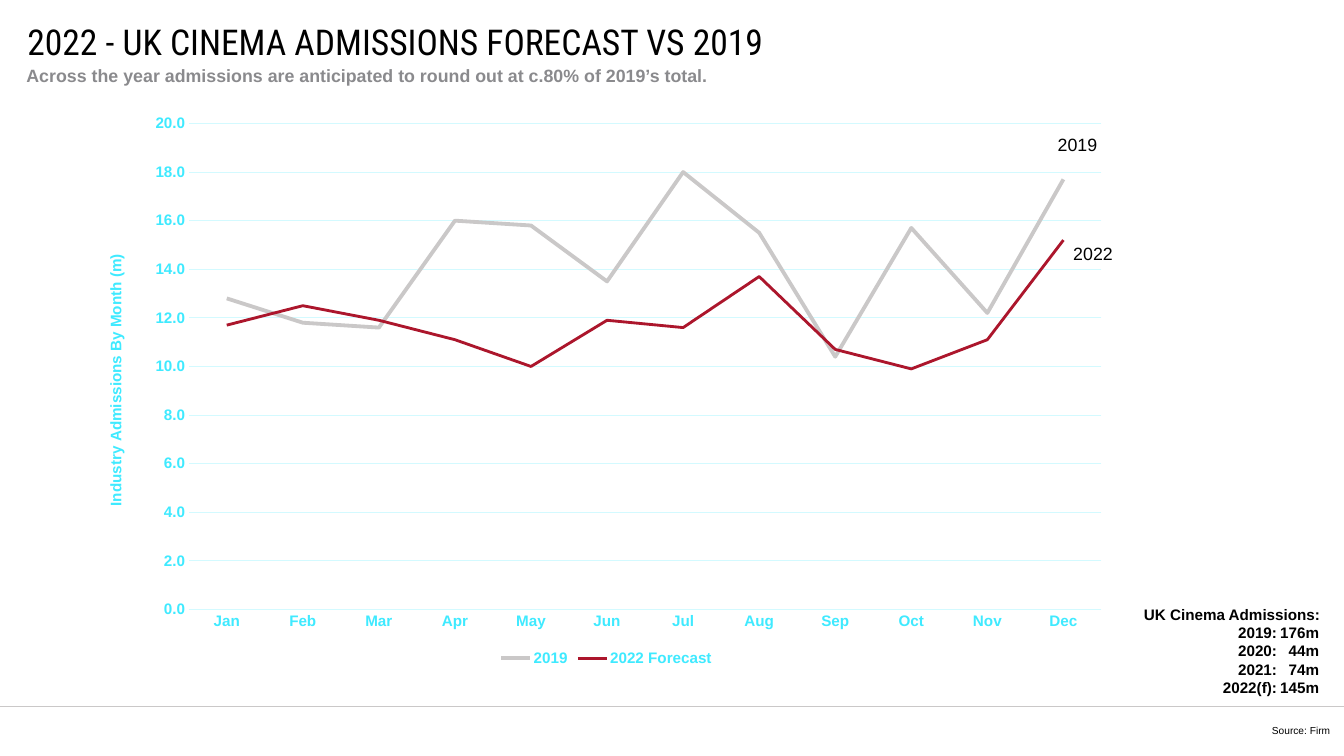
from lxml.etree import SubElement
from pptx import Presentation
from pptx.chart.data import CategoryChartData
from pptx.dml.color import RGBColor
from pptx.enum.chart import XL_CHART_TYPE as ChartType, XL_LEGEND_POSITION as LegendPosition
from pptx.enum.chart import XL_MARKER_STYLE as Marker, XL_TICK_MARK as TickMark
from pptx.enum.shapes import MSO_CONNECTOR as Connector
from pptx.enum.text import MSO_ANCHOR as Anchor, PP_ALIGN as Align
from pptx.oxml import parse_xml
from pptx.oxml.ns import nsdecls, qn
from pptx.util import Inches, Pt

COLORS = {
    "black": "000000",
    "gray": "8A8A8D",
    "silver": "CAC8C8",
    "red": "AC162C",
    "cyan": "3FEAFF",
    "grid": "D3FAFF",
}
MONTHS = ["Jan", "Feb", "Mar", "Apr", "May", "Jun", "Jul", "Aug", "Sep", "Oct", "Nov", "Dec"]
SERIES = [
    ("2019", "silver", 3, [12.8, 11.8, 11.6, 16, 15.8, 13.5, 18, 15.5, 10.4, 15.7, 12.2, 17.7]),
    ("2022 Forecast", "red", 2.25, [11.7, 12.5, 11.9, 11.1, 10, 11.9, 11.6, 13.7, 10.7, 9.9, 11.1, 15.2]),
]
TOTALS = [("2019:", "176m"), ("2020:", "44m"), ("2021:", "74m"), ("2022(f):", "145m")]


def color(name):
    return RGBColor.from_string(COLORS[name])


def style_font(font, size, name="black", bold=False, face="Arial"):
    font.size = Pt(size)
    font.bold = bold
    font.name = face
    font.color.rgb = color(name)


def style_line(line, name, width):
    line.color.rgb = color(name)
    line.width = Pt(width)


def add_frame(page, box, inset=True, anchor=Anchor.TOP):
    frame = page.shapes.add_textbox(*map(Inches, box)).text_frame
    frame.word_wrap = True
    frame.vertical_anchor = anchor
    if not inset:
        frame.margin_left = frame.margin_right = frame.margin_top = frame.margin_bottom = 0
    return frame


def add_text(para, text, size, align=Align.LEFT, **style):
    para.alignment = align
    span = para.add_run()
    span.text = text
    style_font(span.font, size, **style)


def add_header(page, box):
    left, top, width = box
    title = add_frame(page, (left, top, width, 0.31), inset=False, anchor=Anchor.MIDDLE)
    add_text(title.paragraphs[0], "2022 - UK CINEMA ADMISSIONS FORECAST VS 2019", 28, face="Roboto Condensed")
    subtitle = add_frame(page, (left - 0.11, top + 0.36, width, 0.48))
    add_text(
        subtitle.paragraphs[0],
        "Across the year admissions are anticipated to round out at c.80% of 2019’s total.",
        14, name="gray", bold=True,
    )


def set_layout(parent, index, **values):
    for old in parent.findall(qn("c:layout")):
        parent.remove(old)
    layout = parse_xml(f"<c:layout {nsdecls('c')}><c:manualLayout/></c:layout>")
    for tag, value in values.items():
        SubElement(layout[0], qn(f"c:{tag}")).set("val", str(value))
    parent.insert(index, layout)


def style_axes(chart):
    months, admissions = chart.category_axis, chart.value_axis
    for axis in (months, admissions):
        axis.major_tick_mark = axis.minor_tick_mark = TickMark.NONE
        style_font(axis.tick_labels.font, 12, "cyan", True)
    months.has_major_gridlines = False
    style_line(months.format.line, "grid", 0.75)
    admissions.minimum_scale, admissions.maximum_scale, admissions.major_unit = 0, 20, 2
    admissions.format.line.fill.background()
    admissions.has_major_gridlines = True
    style_line(admissions.major_gridlines.format.line, "grid", 0.75)
    admissions.tick_labels.number_format = "0.0"
    admissions.tick_labels.number_format_is_linked = False
    title = admissions.axis_title
    add_text(title.text_frame.paragraphs[0], "Industry Admissions By Month (m)", 12,
             align=Align.CENTER, name="cyan", bold=True)
    title.text_frame._txBody.bodyPr.set("rot", "-5400000")
    title.text_frame._txBody.bodyPr.set("vert", "horz")
    set_layout(title._element, 1, xMode="edge", yMode="edge", x=0.01, y=0.26)


def add_admissions_chart(page, box):
    left, top, width, height = box
    data = CategoryChartData(number_format="0.0")
    data.categories = MONTHS
    for name, _, _, values in SERIES:
        data.add_series(name, values)
    chart = page.shapes.add_chart(ChartType.LINE, *map(Inches, box), data).chart
    chart.has_title = False
    style_font(chart.font, 10, "cyan")
    plot = chart.plots[0]
    plot.vary_by_categories = False
    for series, (_, name, weight, _) in zip(plot.series, SERIES):
        series.smooth = False
        series.marker.style = Marker.NONE
        style_line(series.format.line, name, weight)
    style_axes(chart)
    chart.has_legend = True
    chart.legend.position = LegendPosition.BOTTOM
    chart.legend.include_in_layout = False
    style_font(chart.legend.font, 12, "cyan", True)
    plot_area = chart._chartSpace.find(".//" + qn("c:plotArea"))
    set_layout(plot_area, 0, layoutTarget="inner", xMode="edge", yMode="edge",
               x=0.093, y=0.034, w=0.889, h=0.859)
    for year, across, down in (("2019", 10.45, 0.27), ("2022", 10.62, 1.47)):
        label = add_frame(page, (left + across, top + down, 0.81, 0.34))
        add_text(label.paragraphs[0], year, 14)


def add_totals(page, box):
    frame = add_frame(page, box)
    add_text(frame.paragraphs[0], "UK Cinema Admissions:", 12, align=Align.RIGHT, bold=True)
    for year, total in TOTALS:
        para = frame.add_paragraph()
        stops = SubElement(para._p.get_or_add_pPr(), qn("a:tabLst"))
        for stop in (1.99, 2.45):
            SubElement(stops, qn("a:tab"), pos=str(Inches(stop)), algn="r")
        add_text(para, f"\t{year}\t{total}", 12, bold=True)


def add_footer(page, box):
    left, top, width = box
    rule = page.shapes.add_connector(
        Connector.STRAIGHT, Inches(left), Inches(top), Inches(left + width), Inches(top))
    style_line(rule.line, "silver", 0.5)
    SubElement(rule._element.spPr, qn("a:effectLst"))
    source = add_frame(page, (left + width - 3.56, top + 0.13, 3.41, 0.27), inset=False, anchor=Anchor.MIDDLE)
    add_text(source.paragraphs[0], "Source: Firm", 8, align=Align.RIGHT)


def main():
    deck = Presentation()
    deck.slide_width, deck.slide_height = Inches(14.7), Inches(8.27)
    page = deck.slides.add_slide(deck.slide_layouts[6])
    add_footer(page, (0, 7.73, 14.7))
    add_header(page, (0.3, 0.3, 13.58))
    add_totals(page, (11.88, 6.57, 2.66, 1.11))
    add_admissions_chart(page, (1.02, 1.14, 11.23, 6.19))
    deck.save("out.pptx")


if __name__ == "__main__":
    main()
